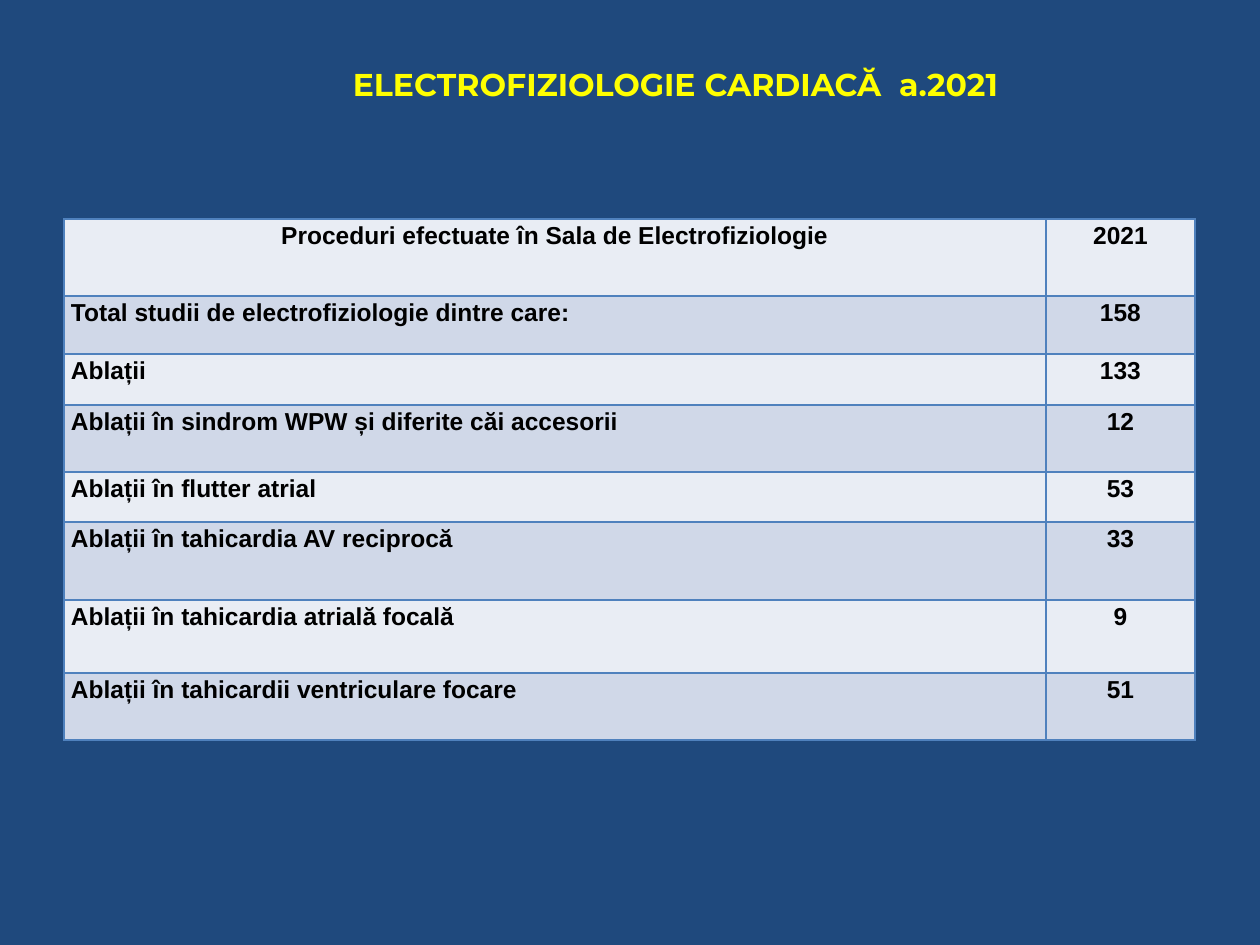
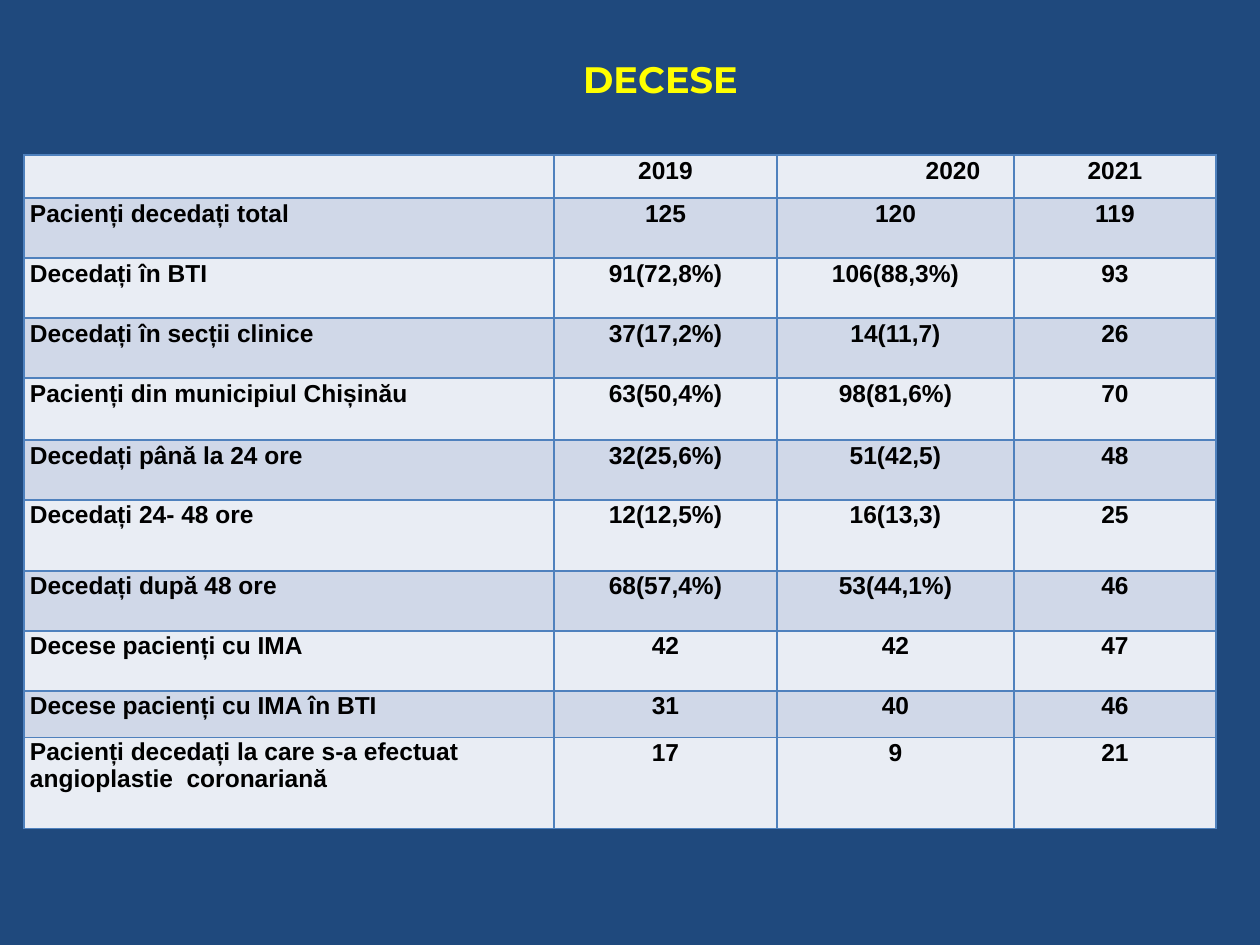
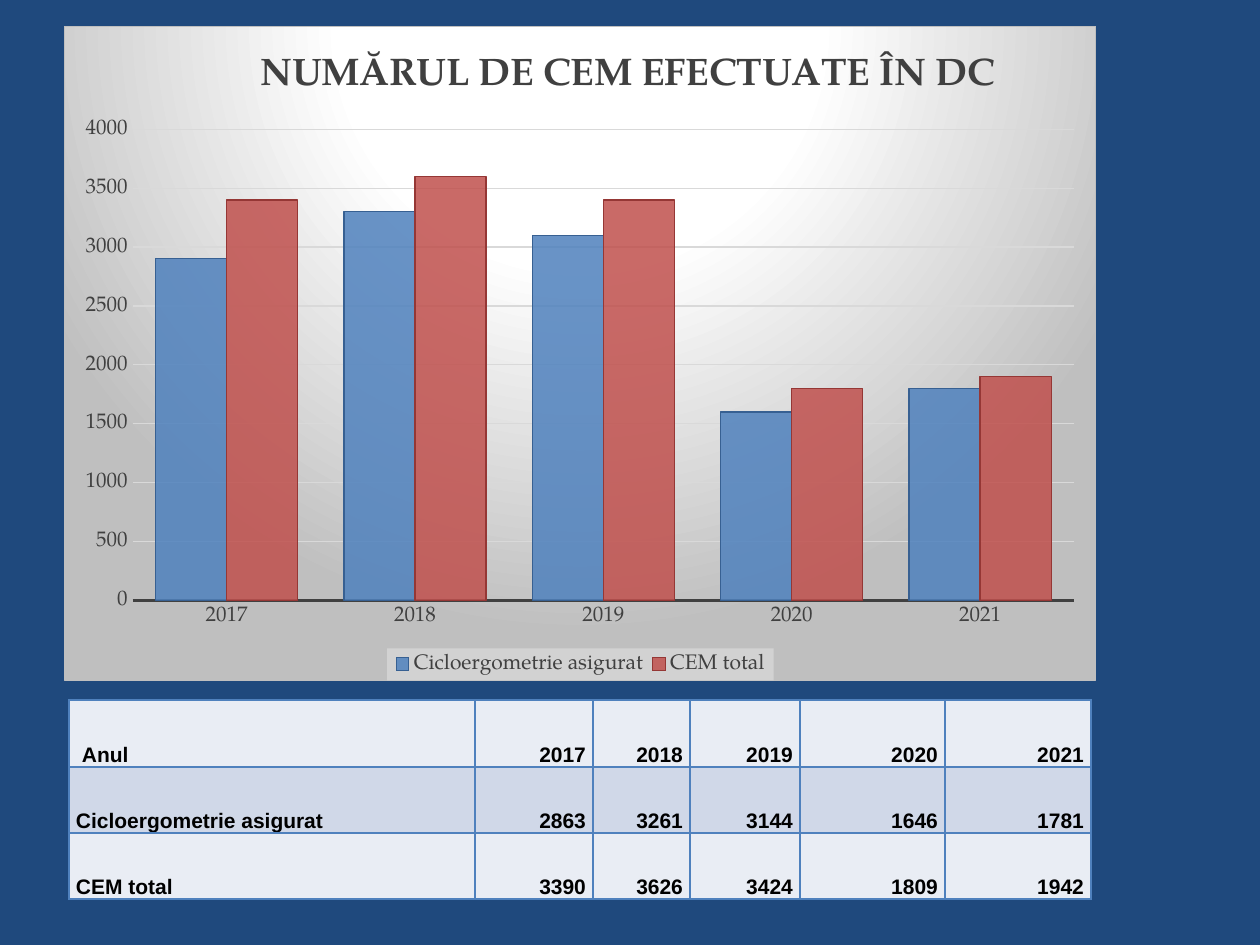
"""Build three slides of cardiology activity figures: two tables and a chart with its table."""
from lxml.etree import fromstring
from pptx import Presentation
from pptx.chart.data import CategoryChartData
from pptx.dml.color import RGBColor
from pptx.enum.chart import XL_CHART_TYPE as ChartType, XL_LEGEND_POSITION as LegendPosition, XL_TICK_MARK as TickMark
from pptx.enum.text import MSO_ANCHOR as Anchor, MSO_AUTO_SIZE as AutoSize, PP_ALIGN as Align
from pptx.oxml.ns import nsdecls, qn
from pptx.util import Emu, Pt

NAVY = RGBColor(0x1F, 0x49, 0x7D)
YELLOW = RGBColor(0xFF, 0xFF, 0x00)
BLACK = RGBColor(0x00, 0x00, 0x00)
CHARCOAL = RGBColor(0x40, 0x40, 0x40)
GRID_GRAY = RGBColor(0xD9, 0xD9, 0xD9)
PANEL_GRAY = RGBColor(0xBF, 0xBF, 0xBF)
LEGEND_GRAY = RGBColor(0xF2, 0xF2, 0xF2)
WHITE = RGBColor(0xFF, 0xFF, 0xFF)
BLUE = RGBColor(0x4F, 0x81, 0xBD)
DARK_BLUE = RGBColor(0x37, 0x60, 0x92)
RED = RGBColor(0xC0, 0x50, 0x4D)
DARK_RED = RGBColor(0x95, 0x37, 0x35)
BANDS = (RGBColor(0xE9, 0xED, 0xF4), RGBColor(0xD0, 0xD8, 0xE8))

TITLE_FONT, TABLE_FONT, CHART_FONT = "Montserrat", "Arial", "TeX Gyre Pagella"
PX_PER_INCH = 126
CHART_WIDTH, CHART_HEIGHT = 1032, 655
TITLE_ONLY, BLANK = 5, 6

PROCEDURES = [
    ("Proceduri efectuate în Sala de Electrofiziologie", "2021"),
    ("Total studii de electrofiziologie dintre care:", "158"),
    ("Ablații", "133"),
    ("Ablații în sindrom WPW și diferite căi accesorii", "12"),
    ("Ablații în flutter atrial", "53"),
    ("Ablații în tahicardia AV reciprocă", "33"),
    ("Ablații în tahicardia atrială focală", "9"),
    ("Ablații în tahicardii ventriculare focare", "51"),
]
DEATHS = [
    ("", "2019", "2020", "2021"),
    ("Pacienți decedați total", "125", "120", "119"),
    ("Decedați în BTI", "91(72,8%)", "106(88,3%)", "93"),
    ("Decedați în secții clinice", "37(17,2%)", "14(11,7)", "26"),
    ("Pacienți din municipiul Chișinău", "63(50,4%)", "98(81,6%)", "70"),
    ("Decedați până la 24 ore", "32(25,6%)", "51(42,5)", "48"),
    ("Decedați 24- 48 ore", "12(12,5%)", "16(13,3)", "25"),
    ("Decedați după 48 ore", "68(57,4%)", "53(44,1%)", "46"),
    ("Decese pacienți cu IMA", "42", "42", "47"),
    ("Decese pacienți cu IMA în BTI", "31", "40", "46"),
    ("Pacienți decedați la care s-a efectuat angioplastie  coronariană", "17", "9", "21"),
]
YEARS = ("2017", "2018", "2019", "2020", "2021")
TESTS = {
    "Cicloergometrie asigurat": (2863, 3261, 3144, 1646, 1781),
    "CEM total": (3390, 3626, 3424, 1809, 1942),
}
SERIES_COLORS = ((BLUE, DARK_BLUE), (RED, DARK_RED))


def px(length):
    """Turn pixels into EMU."""
    return Emu(round(length * 914400 / PX_PER_INCH))


def style_font(font, name, size, color, bold=False):
    """Set the face, size, colour and weight of a font."""
    font.name, font.size, font.bold = name, Pt(size), bold
    font.color.rgb = color


def set_layout(parent, index, inner=False, **lengths):
    """Place a chart part by pixels from the corner of the chart."""
    for old in parent.findall(qn("c:layout")):
        parent.remove(old)
    target = '<c:layoutTarget val="inner"/>' if inner else ""
    modes = '<c:xMode val="edge"/><c:yMode val="edge"/>'
    sizes = "".join(
        f'<c:{key} val="{length / (CHART_WIDTH if key in "xw" else CHART_HEIGHT)}"/>'
        for key, length in lengths.items())
    parent.insert(index, fromstring(
        f'<c:layout {nsdecls("c")}><c:manualLayout>{target}{modes}{sizes}</c:manualLayout></c:layout>'))


class Deck:
    """Hold the shared style and the current slide."""

    def __init__(self):
        """Open a presentation with a navy master."""
        self.presentation = Presentation()
        self.presentation.slide_width = px(1260)
        self.presentation.slide_height = px(945)
        background = self.presentation.slide_master.background.fill
        background.solid()
        background.fore_color.rgb = NAVY
        self.slide = None

    def add_slide(self, layout):
        """Start a new slide."""
        layouts = self.presentation.slide_layouts
        self.slide = self.presentation.slides.add_slide(layouts[layout])

    def title(self, text, left, top, width, height, size):
        """Fill and place the title placeholder."""
        shape = self.slide.shapes.title
        shape.left, shape.top, shape.width, shape.height = map(px, (left, top, width, height))
        frame = shape.text_frame
        frame.word_wrap, frame.auto_size = True, AutoSize.NONE
        frame.vertical_anchor = Anchor.BOTTOM
        paragraph = frame.paragraphs[0]
        paragraph.alignment = Align.CENTER
        run = paragraph.add_run()
        run.text = text
        style_font(run.font, TITLE_FONT, size, YELLOW, True)

    def cell(self, cell, text, fill, align, size, anchor, insets, spacing):
        """Write and format one table cell."""
        side, top = insets
        cell.margin_left = cell.margin_right = px(side)
        cell.margin_top = cell.margin_bottom = px(top)
        cell.vertical_anchor = anchor
        properties = cell._tc.get_or_add_tcPr()
        for edge in "LRTB":
            properties.append(fromstring(
                f'<a:ln{edge} {nsdecls("a")} w="12700"><a:solidFill>'
                f'<a:srgbClr val="{BLUE}"/></a:solidFill></a:ln{edge}>'))
        cell.fill.solid()
        cell.fill.fore_color.rgb = fill
        paragraph = cell.text_frame.paragraphs[0]
        paragraph.alignment, paragraph.line_spacing = align, spacing
        if text:
            run = paragraph.add_run()
            run.text = text
            style_font(run.font, TABLE_FONT, size, BLACK, True)

    def table(self, rows, left, top, widths, heights, insets, size=14,
              align=Align.CENTER, anchor=Anchor.TOP, spacing=1.07):
        """Add a banded table with labels in the first column."""
        frame = self.slide.shapes.add_table(
            len(rows), len(widths), px(left), px(top), px(sum(widths)), px(sum(heights)))
        table = frame.table
        table.first_row = table.horz_banding = False
        for column, width in zip(table.columns, widths):
            column.width = px(width)
        for index, (values, height) in enumerate(zip(rows, heights)):
            table.rows[index].height = px(height)
            for column, text in enumerate(values):
                self.cell(table.cell(index, column), text, BANDS[index % 2],
                          align if column else Align.LEFT, size, anchor, insets, spacing)
        return table

    def column_chart(self, title, categories, series, left, top):
        """Add a clustered column chart, in hundreds, on a shaded panel."""
        data = CategoryChartData()
        data.categories = categories
        for name, values in series.items():
            data.add_series(name, [round(value, -2) for value in values])
        chart = self.slide.shapes.add_chart(
            ChartType.COLUMN_CLUSTERED, *map(px, (left, top, CHART_WIDTH, CHART_HEIGHT)), data).chart
        style_font(chart.font, CHART_FONT, 10, WHITE)
        self.chart_title(chart, title)
        self.chart_axes(chart)
        self.chart_series(chart)
        self.chart_legend(chart)
        self.chart_panel(chart)

    def chart_title(self, chart, text):
        """Write the chart title."""
        chart.has_title = True
        run = chart.chart_title.text_frame.paragraphs[0].add_run()
        run.text = text
        style_font(run.font, CHART_FONT, 22, CHARCOAL, True)
        set_layout(chart.element.xpath("c:chart/c:title")[0], 1, x=189, y=20)

    def chart_axes(self, chart):
        """Format the axes and place the plot area."""
        for axis in (chart.category_axis, chart.value_axis):
            axis.major_tick_mark = axis.minor_tick_mark = TickMark.NONE
            style_font(axis.tick_labels.font, CHART_FONT, 12, CHARCOAL)
        baseline = chart.category_axis.format.line
        baseline.color.rgb, baseline.width = CHARCOAL, Pt(1.5)
        values = chart.value_axis
        values.minimum_scale, values.maximum_scale, values.major_unit = 0, 4000, 500
        values.format.line.fill.background()
        grid = values.major_gridlines.format.line
        grid.color.rgb, grid.width = GRID_GRAY, Pt(0.75)
        set_layout(chart.element.xpath("c:chart/c:plotArea")[0], 0, True,
                   x=68, y=103, w=943, h=472)

    def chart_series(self, chart):
        """Colour the columns with slight transparency."""
        plot = chart.plots[0]
        plot.gap_width, plot.overlap, plot.vary_by_categories = 65, 0, False
        for series, (fill, outline) in zip(plot.series, SERIES_COLORS):
            series.format.fill.solid()
            series.format.fill.fore_color.rgb = fill
            series.format.line.color.rgb = outline
            series.format.line.width = Pt(0.75)
        for color in chart.element.xpath(".//c:ser/c:spPr/a:solidFill/a:srgbClr"):
            color.append(fromstring(f'<a:alpha {nsdecls("a")} val="85000"/>'))

    def chart_legend(self, chart):
        """Add the legend on a translucent strip."""
        chart.has_legend = True
        legend = chart.legend
        legend.position, legend.include_in_layout = LegendPosition.BOTTOM, False
        style_font(legend.font, CHART_FONT, 12, CHARCOAL)
        element = chart.element.xpath("c:chart/c:legend")[0]
        set_layout(element, 1, x=323, y=623, w=387, h=32)
        element.find(qn("c:overlay")).addnext(fromstring(
            f'<c:spPr {nsdecls("c", "a")}><a:solidFill><a:srgbClr val="{LEGEND_GRAY}">'
            '<a:alpha val="39000"/></a:srgbClr></a:solidFill></c:spPr>'))

    def chart_panel(self, chart):
        """Shade the chart area with a circular gradient."""
        stops = "".join(
            f'<a:gs pos="{position}000"><a:srgbClr val="{color}"/></a:gs>'
            for position, color in ((0, WHITE), (39, WHITE), (100, PANEL_GRAY)))
        chart.element.find(qn("c:chart")).addnext(fromstring(
            f'<c:spPr {nsdecls("c", "a")}><a:gradFill><a:gsLst>{stops}</a:gsLst>'
            '<a:path path="circle"><a:fillToRect l="50000" t="-80000" r="50000" b="180000"/></a:path>'
            f'</a:gradFill><a:ln w="9525"><a:solidFill><a:srgbClr val="{PANEL_GRAY}"/>'
            '</a:solidFill></a:ln></c:spPr>'))


def main():
    """Build and save the slides."""
    deck = Deck()

    deck.add_slide(TITLE_ONLY)
    deck.title("ELECTROFIZIOLOGIE CARDIACĂ  a.2021", 184, 20, 983, 89, 18)
    procedures = deck.table(PROCEDURES, 64, 219, (982, 149),
                            (77, 58, 51, 67, 50, 78, 73, 67), (7, 3), spacing=1)
    procedures.cell(0, 0).text_frame.paragraphs[0].alignment = Align.CENTER

    deck.add_slide(TITLE_ONLY)
    deck.title("DECESE", 248, 48, 825, 59, 21)
    deaths = deck.table(DEATHS, 24, 155, (530, 223, 237, 202),
                        (43, 60, 60, 60, 62, 60, 71, 60, 60, 47, 91), (6, 0))
    deaths.cell(0, 2).margin_left = px(121)
    deaths.cell(len(DEATHS) - 1, 0).text_frame.paragraphs[0].line_spacing = 1

    deck.add_slide(BLANK)
    deck.column_chart("NUMĂRUL DE CEM EFECTUATE ÎN DC", YEARS, TESTS, 64, 26)
    rows = [("Anul", *YEARS)] + [(name, *map(str, values)) for name, values in TESTS.items()]
    tests = deck.table(rows, 69, 700, (406, 118, 97, 110, 145, 146), (67, 66, 66), (7, 0),
                       12, Align.RIGHT, Anchor.BOTTOM)
    tests.cell(0, 0).margin_left = px(13)

    deck.presentation.save("out.pptx")


if __name__ == "__main__":
    main()
